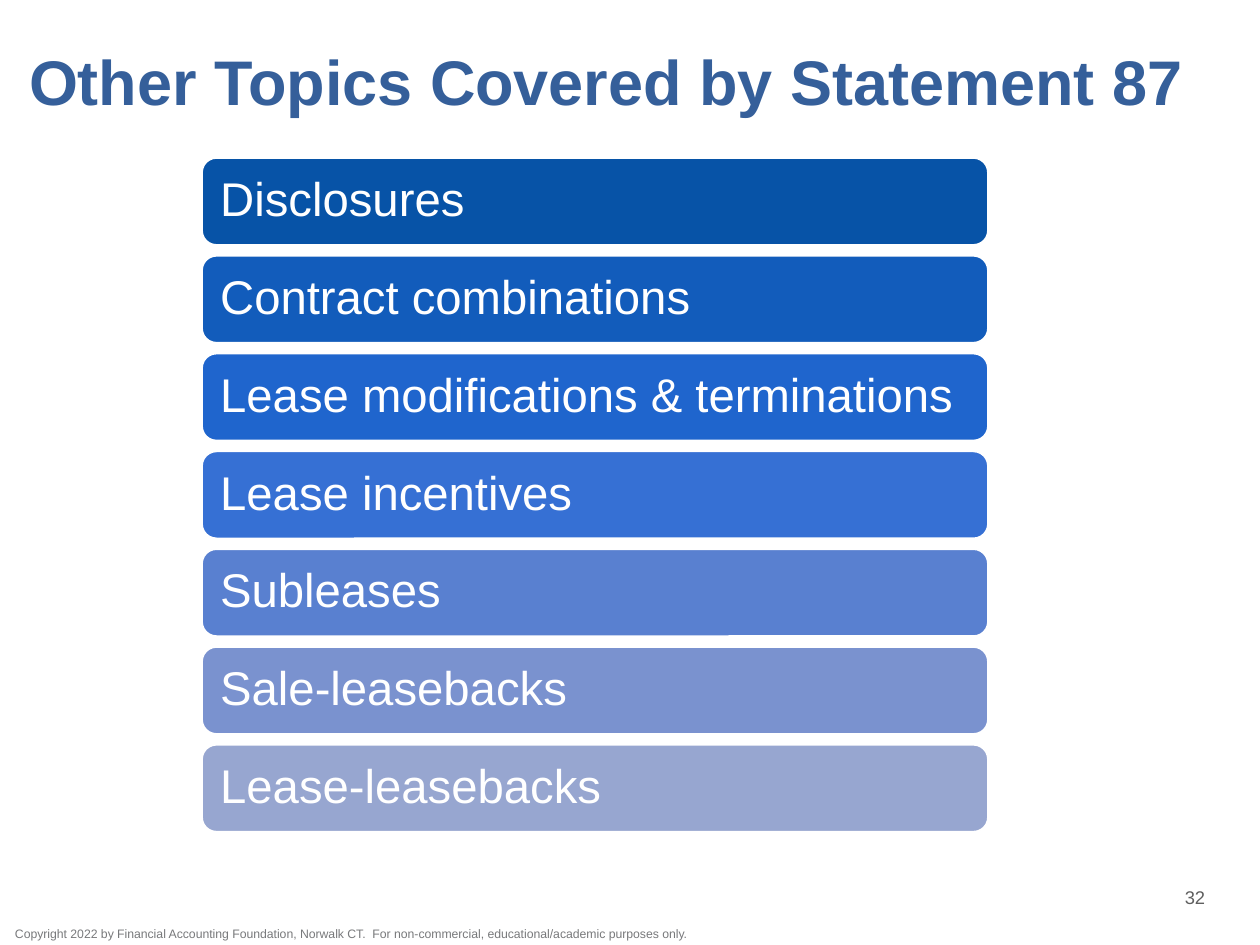
import pptx
import pptx.util
import pptx.dml.color
import pptx.enum.shapes
import pptx.enum.text

# Content
TITLE = "Other Topics Covered by Statement 87"
TOPICS = [
    ("Disclosures", "0753A7"),
    ("Contract combinations", "125CBB"),
    ("Lease modifications & terminations", "1F65CD"),
    ("Lease incentives", "3670D4"),
    ("Subleases", "5980D0"),
    ("Sale-leasebacks", "7A92CF"),
    ("Lease-leasebacks", "97A6D0"),
]
PAGE_NUMBER = "32"
COPYRIGHT = ("Copyright 2022 by Financial Accounting Foundation, Norwalk CT.  "
             "For non-commercial, educational/academic purposes only.")

# Layout in px, 126 to the inch
EMU_PER_PX = 914400 / 126
PAGE_SIZE = (1260, 945)
TITLE_AREA = (16, 24, 1196, 123)
NUMBER_AREA = (1130, 876, 130, 42)
COPYRIGHT_AREA = (15, 925, 684, 18)
BAR_LEFT, BAR_TOP, BAR_WIDTH, BAR_HEIGHT = 202, 158, 786, 87
BAR_STEP = 97.8


def px(value):
    return pptx.util.Emu(round(value * EMU_PER_PX))


def color(hex_string):
    return pptx.dml.color.RGBColor.from_string(hex_string)


def set_attributes(target, values):
    for name, value in values.items():
        setattr(target, name, value)


def place(shape, area):
    set_attributes(shape, dict(zip(("left", "top", "width", "height"), map(px, area))))


def write(shape, text, size, hex_string, insets, align="LEFT", bold=False, spacing=1.0):
    frame = shape.text_frame
    set_attributes(frame, {
        "word_wrap": True,
        "auto_size": pptx.enum.text.MSO_AUTO_SIZE.NONE,
        "vertical_anchor": pptx.enum.text.MSO_ANCHOR.MIDDLE,
    })
    sides = ("margin_left", "margin_top", "margin_right", "margin_bottom")
    set_attributes(frame, dict(zip(sides, map(px, insets))))
    para = frame.paragraphs[0]
    set_attributes(para, {
        "alignment": getattr(pptx.enum.text.PP_ALIGN, align),
        "line_spacing": spacing,
    })
    span = para.add_run()
    span.text = text
    set_attributes(span.font, {"name": "Arial", "size": pptx.util.Pt(size), "bold": bold})
    span.font.color.rgb = color(hex_string)


def add_bar(page, index, text, fill):
    bar = page.shapes.add_shape(
        pptx.enum.shapes.MSO_SHAPE.ROUNDED_RECTANGLE, 0, 0, 0, 0)
    place(bar, (BAR_LEFT, BAR_TOP + index * BAR_STEP, BAR_WIDTH, BAR_HEIGHT))
    bar.shadow.inherit = False
    bar.fill.solid()
    bar.fill.fore_color.rgb = color(fill)
    bar.line.color.rgb = color("FFFFFF")
    bar.line.width = pptx.util.Pt(1)
    write(bar, text, 27, "FFFFFF", (14, 14, 14, 14), spacing=0.9)


def add_label(page, area, *text_format, **options):
    box = page.shapes.add_textbox(0, 0, 0, 0)
    place(box, area)
    write(box, *text_format, **options)


def main():
    deck = pptx.Presentation()
    deck.slide_width, deck.slide_height = map(px, PAGE_SIZE)
    page = deck.slides.add_slide(deck.slide_layouts[5])

    # Title
    title = page.shapes.title
    place(title, TITLE_AREA)
    write(title, TITLE, 36, "355F9A", (13, 0, 0, 0), bold=True,
          spacing=pptx.util.Pt(37))

    # Topic bars
    for index, (text, fill) in enumerate(TOPICS):
        add_bar(page, index, text, fill)

    # Page number and copyright line
    add_label(page, NUMBER_AREA, PAGE_NUMBER, 10.5, "5F5F5F", (13, 6, 13, 6),
              align="CENTER")
    add_label(page, COPYRIGHT_AREA, COPYRIGHT, 7, "78797B", (0, 0, 0, 0))

    deck.save("out.pptx")


if __name__ == "__main__":
    main()
